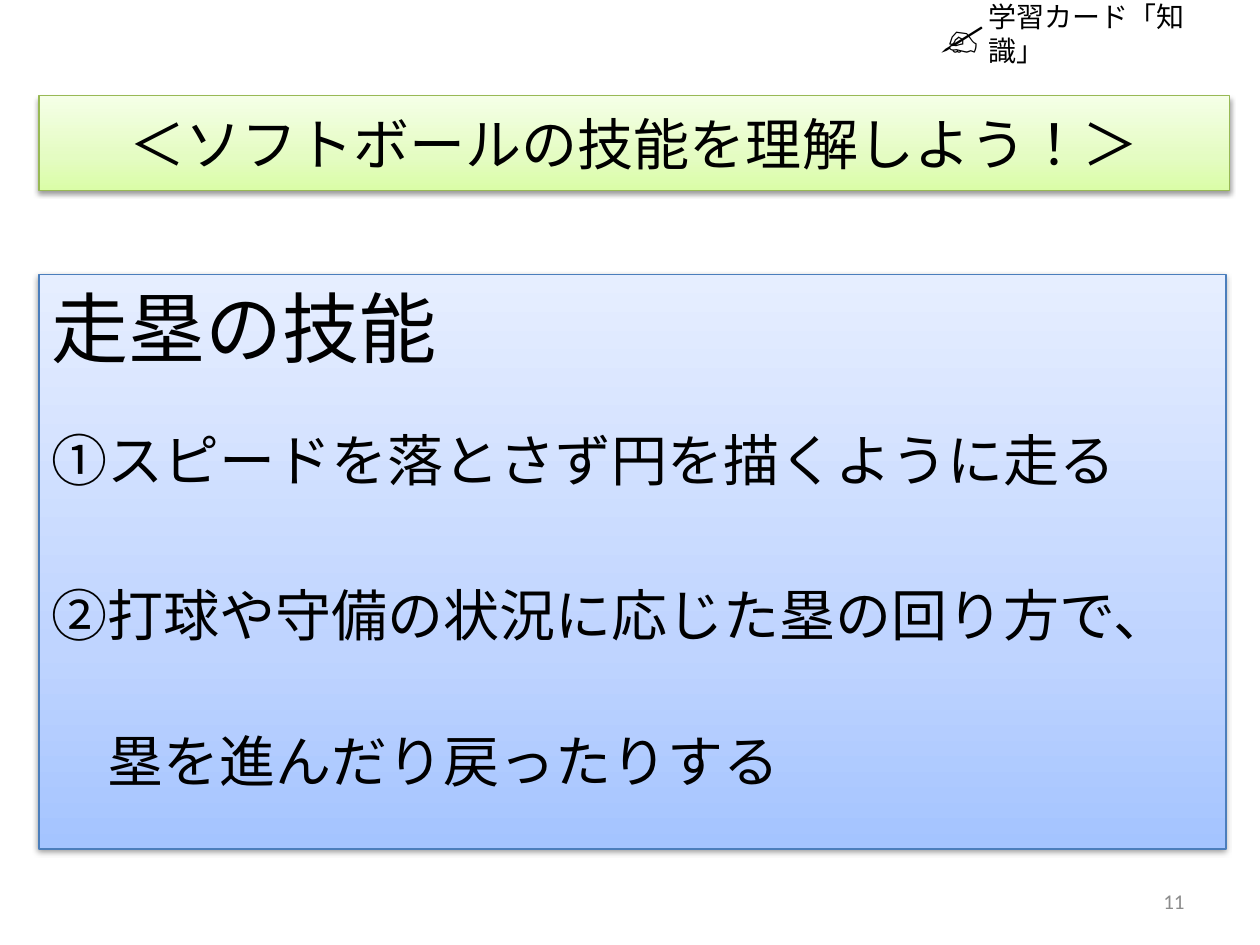
"""Build the softball base-running skills study card."""
from lxml import etree
from pptx import Presentation
from pptx.dml.color import RGBColor
from pptx.enum.lang import MSO_LANGUAGE_ID
from pptx.enum.shapes import MSO_SHAPE
from pptx.enum.text import MSO_ANCHOR, PP_ALIGN
from pptx.oxml import parse_xml
from pptx.oxml.ns import nsdecls, qn
from pptx.util import Inches, Pt

RECT = MSO_SHAPE.RECTANGLE
JAPANESE = MSO_LANGUAGE_ID.JAPANESE
TOP, MIDDLE = MSO_ANCHOR.TOP, MSO_ANCHOR.MIDDLE
LEFT, CENTER, RIGHT = PP_ALIGN.LEFT, PP_ALIGN.CENTER, PP_ALIGN.RIGHT
LATIN, CJK = "Calibri", "Noto Sans CJK JP"
SHADOW = (
    f'<a:effectLst {nsdecls("a")}><a:outerShdw blurRad="{Pt(3.1)}" dist="{Pt(1.6)}" '
    'dir="5400000" rotWithShape="0"><a:srgbClr val="000000"><a:alpha val="38000"/>'
    '</a:srgbClr></a:outerShdw></a:effectLst>'
)


def rgb(value):
    return RGBColor.from_string(value)


def style(p, text, size, font, color, align):
    p.text = text
    p.alignment = align
    r = p.runs[0]
    r.font.size = Pt(size)
    r.font.name = font
    r.font.language_id = JAPANESE
    r.font.color.rgb = rgb(color)
    etree.SubElement(r.font._element, qn("a:ea")).set("typeface", CJK)


prs = Presentation()
prs.slide_width, prs.slide_height = Inches(10), Inches(7.5)
s = prs.slides.add_slide(prs.slide_layouts[6])

labels = [
    ((7.17, 6.95, 2.33, 0.4), "11", 12, "8C8C8C", RIGHT),
    ((7.75, 0.08, 2.05, 0.37), "学習カード「知識」", 16, "000000", LEFT),
    ((7.36, -0.02, 0.47, 0.57), "✍", 28, "000000", LEFT),
]
for box, text, size, color, align in labels:
    tf = s.shapes.add_textbox(*map(Inches, box)).text_frame
    tf.word_wrap = True
    tf.vertical_anchor = MIDDLE
    style(tf.paragraphs[0], text, size, LATIN, color, align)

title = [("＜ソフトボールの技能を理解しよう！＞", 32, 0, 0)]
skills = [
    ("走塁の技能", 44, 0, 0),
    ("①スピードを落とさず円を描くように走る", 32, 30, 0),
    ("②打球や守備の状況に応じた塁の回り方で、", 32, 50, 0),
    ("塁を進んだり戻ったりする", 32, 45, 32),
]
panels = [
    ((0.31, 0.76, 9.45, 0.75), ("DAFDA7", "E4FCC2", "F5FFE7"), "98B955",
     MIDDLE, CENTER, title),
    ((0.31, 2.18, 9.42, 4.56), ("A4C4FF", "BFD4FF", "E6EEFF"), "4B7EBC",
     TOP, LEFT, skills),
]
for box, colors, line, anchor, align, lines in panels:
    sp = s.shapes.add_shape(RECT, *map(Inches, box))
    stops = "".join(
        f'<a:gs pos="{pos}000"><a:srgbClr val="{color}"/></a:gs>'
        for pos, color in zip((0, 35, 100), colors)
    )
    sp.line.color.rgb = rgb(line)
    sp.line.width = Pt(0.75)
    props = sp._element.spPr
    props.insert(2, parse_xml(
        f'<a:gradFill {nsdecls("a")} rotWithShape="1"><a:gsLst>{stops}</a:gsLst>'
        '<a:lin ang="16200000" scaled="0"/></a:gradFill>'
    ))
    props.append(parse_xml(SHADOW))
    tf = sp.text_frame
    tf.word_wrap = True
    tf.vertical_anchor = anchor
    for i, (text, size, before, indent) in enumerate(lines):
        p = tf.add_paragraph() if i else tf.paragraphs[0]
        style(p, text, size, CJK, "000000", align)
        p.space_before = Pt(before)
        p._p.get_or_add_pPr().set("marL", str(Pt(indent)))

prs.save("out.pptx")
